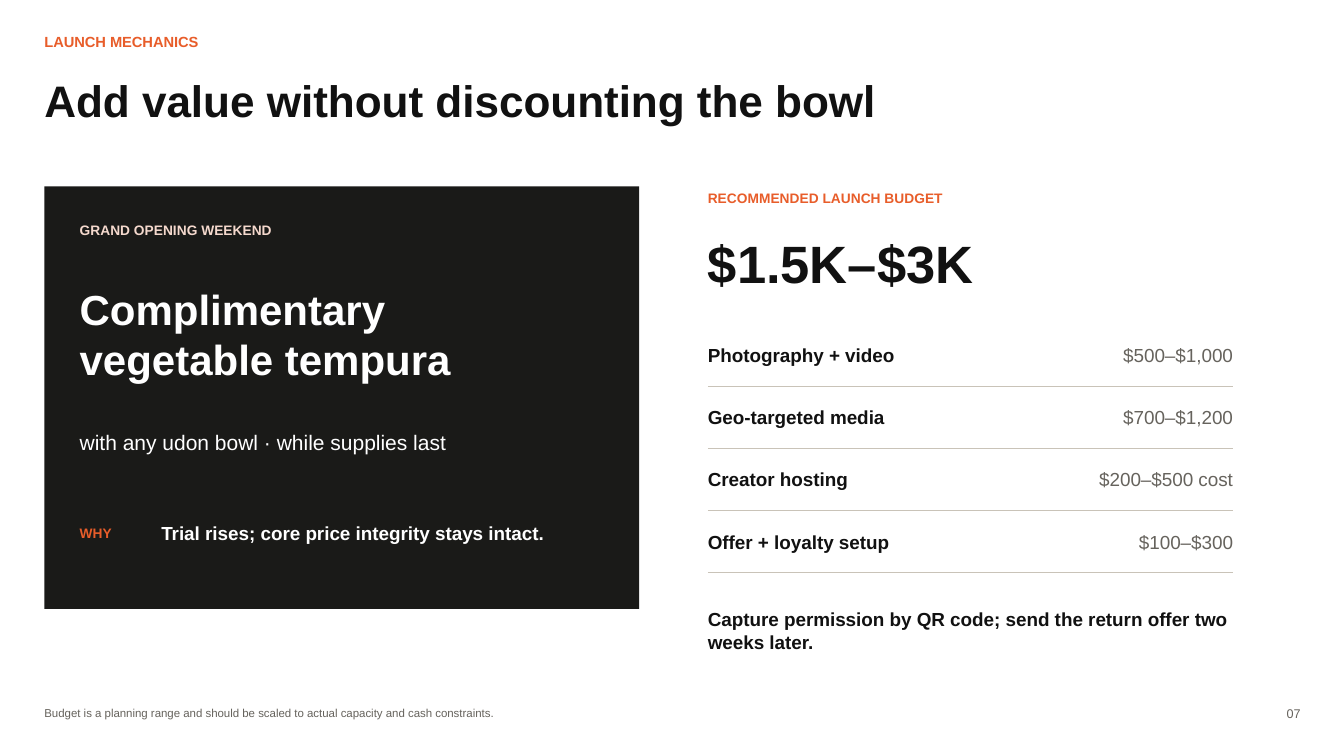
from pptx import Presentation
from pptx.dml.color import RGBColor
from pptx.enum.shapes import MSO_CONNECTOR, MSO_SHAPE
from pptx.enum.text import PP_ALIGN
from pptx.oxml.ns import qn
from pptx.util import Inches, Pt
from lxml.etree import SubElement

INK, GRAY, WHITE = "111111", "66635D", "FFFFFF"
ORANGE, PEACH, DARK, RULE = "E85D2A", "F5D9CD", "1A1A18", "C9C3B8"
LEFT, INSET, RIGHT = 0.44, 0.79, 7.02
WIDTH = 5.21

BUDGET = [
    ("Photography + video", "$500–$1,000"),
    ("Geo-targeted media", "$700–$1,200"),
    ("Creator hosting", "$200–$500 cost"),
    ("Offer + loyalty setup", "$100–$300"),
]


def color(value):
    return RGBColor.from_string(value)


def add_text(slide, text, x, y, w, h, size=13.5, fill=INK, bold=True,
             align=PP_ALIGN.LEFT):
    frame = slide.shapes.add_textbox(
        Inches(x), Inches(y), Inches(w), Inches(h)).text_frame
    frame.word_wrap = True
    frame.margin_left = frame.margin_right = 0
    frame.margin_top = frame.margin_bottom = 0
    para = frame.paragraphs[0]
    para.text = text
    para.alignment = align
    font = para.font
    font.name, font.size, font.bold = "Arial", Pt(size), bold
    font.color.rgb = color(fill)


def add_panel(slide, x, y, w, h):
    panel = slide.shapes.add_shape(
        MSO_SHAPE.RECTANGLE, Inches(x), Inches(y), Inches(w), Inches(h))
    panel.shadow.inherit = False
    panel.fill.solid()
    panel.fill.fore_color.rgb = color(DARK)
    panel.line.fill.background()


def add_rule(slide, x, y, w):
    rule = slide.shapes.add_connector(
        MSO_CONNECTOR.STRAIGHT, Inches(x), Inches(y), Inches(x + w), Inches(y))
    rule.line.color.rgb = color(RULE)
    rule.line.width = Pt(0.75)
    SubElement(rule._element.spPr, qn("a:effectLst"))


def add_header(slide):
    add_text(slide, "LAUNCH MECHANICS", LEFT, 0.33, 3.65, 0.23,
             size=10.5, fill=ORANGE)
    add_text(slide, "Add value without discounting the bowl",
             LEFT, 0.73, 11.67, 0.75, size=31.5)


def add_offer(slide):
    add_panel(slide, LEFT, 1.85, 5.9, 4.19)
    add_text(slide, "GRAND OPENING WEEKEND", INSET, 2.2, 4.48, 0.23,
             size=9.8, fill=PEACH)
    add_text(slide, "Complimentary\vvegetable tempura", INSET, 2.81, 4.9, 1.1,
             size=30, fill=WHITE)
    add_text(slide, "with any udon bowl · while supplies last",
             INSET, 4.26, 4.48, 0.56, size=15, fill=WHITE, bold=False)
    add_text(slide, "WHY", INSET, 5.21, 0.83, 0.21, size=9.8, fill=ORANGE)
    add_text(slide, "Trial rises; core price integrity stays intact.",
             1.6, 5.18, 3.96, 0.5, fill=WHITE)


def add_budget(slide):
    add_text(slide, "RECOMMENDED LAUNCH BUDGET", RIGHT, 1.88, 4.69, 0.23,
             size=9.8, fill=ORANGE)
    add_text(slide, "$1.5K–$3K", RIGHT, 2.29, 4.58, 0.75, size=37.5)
    step = 1.85 / 3
    for i, (item, cost) in enumerate(BUDGET):
        y = 3.41 + i * step
        add_rule(slide, RIGHT, y + 0.42, WIDTH)
        add_text(slide, item, RIGHT, y, 3.12, 0.29)
        add_text(slide, cost, 10.27, y, 1.96, 0.29,
                 fill=GRAY, bold=False, align=PP_ALIGN.RIGHT)
    add_text(slide, "Capture permission by QR code; send the return offer two "
             "weeks later.", RIGHT, 6.03, WIDTH, 0.46)


def add_footer(slide):
    add_text(slide, "Budget is a planning range and should be scaled to actual "
             "capacity and cash constraints.", LEFT, 7, 11.15, 0.19,
             size=8.2, fill=GRAY, bold=False)
    add_text(slide, "07", 12.42, 7, 0.48, 0.19, size=9, fill=GRAY, bold=False,
             align=PP_ALIGN.RIGHT)


def main():
    deck = Presentation()
    deck.slide_width, deck.slide_height = Inches(13.33), Inches(7.5)
    slide = deck.slides.add_slide(deck.slide_layouts[6])
    add_header(slide)
    add_offer(slide)
    add_budget(slide)
    add_footer(slide)
    deck.save("out.pptx")


if __name__ == "__main__":
    main()
